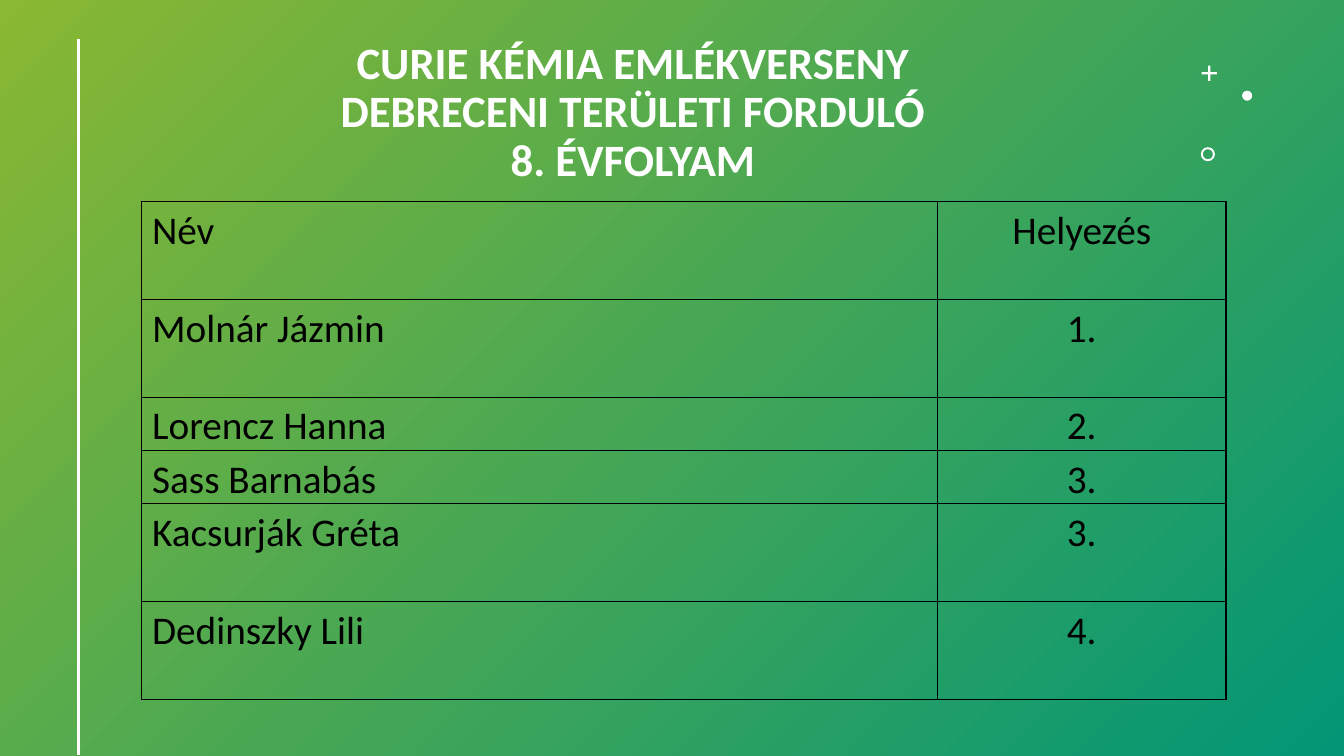
from dataclasses import dataclass

from lxml.etree import SubElement
from pptx import Presentation
from pptx.dml.color import RGBColor
from pptx.enum.shapes import MSO_CONNECTOR, MSO_SHAPE
from pptx.enum.text import MSO_ANCHOR, MSO_AUTO_SIZE, PP_ALIGN
from pptx.oxml import parse_xml
from pptx.oxml.ns import nsdecls, qn
from pptx.shapes.autoshape import Shape
from pptx.slide import Slide
from pptx.table import _Cell
from pptx.util import Inches, Length, Pt

WIDTH, HEIGHT = Inches(13.33), Inches(7.5)
FONT = "Calibri"
WHITE, BLACK, LIME, TEAL = "FFFFFF", "000000", "8AB833", "029676"
TITLE = "CURIE KÉMIA EMLÉKVERSENY\vDEBRECENI TERÜLETI FORDULÓ\v8. ÉVFOLYAM"
COLUMNS = (59.25, 21.48)
ALIGNMENTS = (PP_ALIGN.LEFT, PP_ALIGN.CENTER)
TALL, SHORT = 12.93, 7


@dataclass(frozen=True)
class Ornament:
    kind: MSO_SHAPE
    left: float
    top: float
    size: float
    adjustment: float | None = None


@dataclass(frozen=True)
class Result:
    name: str
    place: str
    height: float = TALL


ORNAMENTS = (
    Ornament(MSO_SHAPE.CROSS, 89.4, 8.67, 1.15, 0.43),
    Ornament(MSO_SHAPE.OVAL, 92.42, 12, 0.75),
    Ornament(MSO_SHAPE.DONUT, 89.35, 19.47, 1.05, 0.14),
)
RESULTS = (
    Result("Név", "Helyezés"),
    Result("Molnár Jázmin", "1."),
    Result("Lorencz Hanna", "2.", SHORT),
    Result("Sass Barnabás", "3.", SHORT),
    Result("Kacsurják Gréta", "3."),
    Result("Dedinszky Lili", "4."),
)


def across(percent: float) -> Length:
    """Length as a percentage of the slide's width."""
    return Length(round(WIDTH * percent / 100))


def down(percent: float) -> Length:
    """Length as a percentage of the slide's height."""
    return Length(round(HEIGHT * percent / 100))


def color(value: str) -> RGBColor:
    return RGBColor.from_string(value)


def add_background(slide: Slide) -> None:
    sp = slide.shapes.add_shape(MSO_SHAPE.RECTANGLE, 0, 0, WIDTH, HEIGHT)
    sp.shadow.inherit = False
    sp.line.fill.background()
    sp.fill.gradient()
    sp.fill.gradient_angle = 315
    for stop, position, value in zip(sp.fill.gradient_stops, (0, 1), (LIME, TEAL)):
        stop.position = position
        stop.color.rgb = color(value)
    slide.shapes.element.insert(2, sp.element)  # behind the title


def format_title(title: Shape) -> None:
    title.left, title.top = across(6.9), down(5.33)
    title.width, title.height = across(80.4), down(19.33)
    tf = title.text_frame
    tf.text = TITLE
    tf.word_wrap = True
    tf.auto_size = MSO_AUTO_SIZE.NONE
    tf.vertical_anchor = MSO_ANCHOR.MIDDLE
    p = tf.paragraphs[0]
    p.alignment = PP_ALIGN.CENTER
    p.line_spacing = 0.9
    p.font.name, p.font.size, p.font.bold = FONT, Pt(32), True
    p.font.color.rgb = color(WHITE)


def add_side_line(slide: Slide) -> None:
    line = slide.shapes.add_connector(
        MSO_CONNECTOR.STRAIGHT, across(5.85), down(5.2), across(5.85), down(99.87)
    )
    line.line.color.rgb = color(WHITE)
    line.line.width = Pt(2)
    SubElement(line.element.spPr, qn("a:effectLst"))


def add_ornament(slide: Slide, ornament: Ornament) -> None:
    size = across(ornament.size)
    sp = slide.shapes.add_shape(
        ornament.kind, across(ornament.left), down(ornament.top), size, size
    )
    if ornament.adjustment is not None:
        sp.adjustments[0] = ornament.adjustment
    sp.shadow.inherit = False
    sp.fill.solid()
    sp.fill.fore_color.rgb = color(WHITE)
    sp.line.fill.background()


def add_borders(cell: _Cell) -> None:
    tc_pr = cell._tc.get_or_add_tcPr()
    for index, side in enumerate(("lnL", "lnR", "lnT", "lnB")):
        border = parse_xml(
            f'<a:{side} {nsdecls("a")} w="{Pt(1)}"><a:solidFill>'
            f'<a:srgbClr val="{BLACK}"/></a:solidFill></a:{side}>'
        )
        tc_pr.insert(index, border)


def fill_cell(cell: _Cell, text: str, alignment: PP_ALIGN) -> None:
    cell.text = text
    cell.margin_left = cell.margin_right = Inches(0.11)
    cell.margin_top, cell.margin_bottom = Inches(0.02), 0
    cell.vertical_anchor = MSO_ANCHOR.TOP
    cell.fill.background()
    add_borders(cell)
    p = cell.text_frame.paragraphs[0]
    p.alignment = alignment
    p.line_spacing = 1.07
    p.space_after = Pt(8)
    p.font.name, p.font.size = FONT, Pt(28)
    p.font.color.rgb = color(BLACK)


def add_results(slide: Slide) -> None:
    height = down(sum(result.height for result in RESULTS))
    table = slide.shapes.add_table(
        len(RESULTS), len(COLUMNS), across(10.5), down(26.67), across(sum(COLUMNS)), height
    ).table
    table.first_row = table.horz_banding = False
    for column, width in zip(table.columns, COLUMNS):
        column.width = across(width)
    for row, result in zip(table.rows, RESULTS):
        row.height = down(result.height)
        for cell, text, alignment in zip(row.cells, (result.name, result.place), ALIGNMENTS):
            fill_cell(cell, text, alignment)


def main() -> None:
    prs = Presentation()
    prs.slide_width, prs.slide_height = WIDTH, HEIGHT
    slide = prs.slides.add_slide(prs.slide_layouts[5])
    add_background(slide)
    format_title(slide.shapes.title)
    add_side_line(slide)
    for ornament in ORNAMENTS:
        add_ornament(slide, ornament)
    add_results(slide)
    prs.save("out.pptx")


if __name__ == "__main__":
    main()
